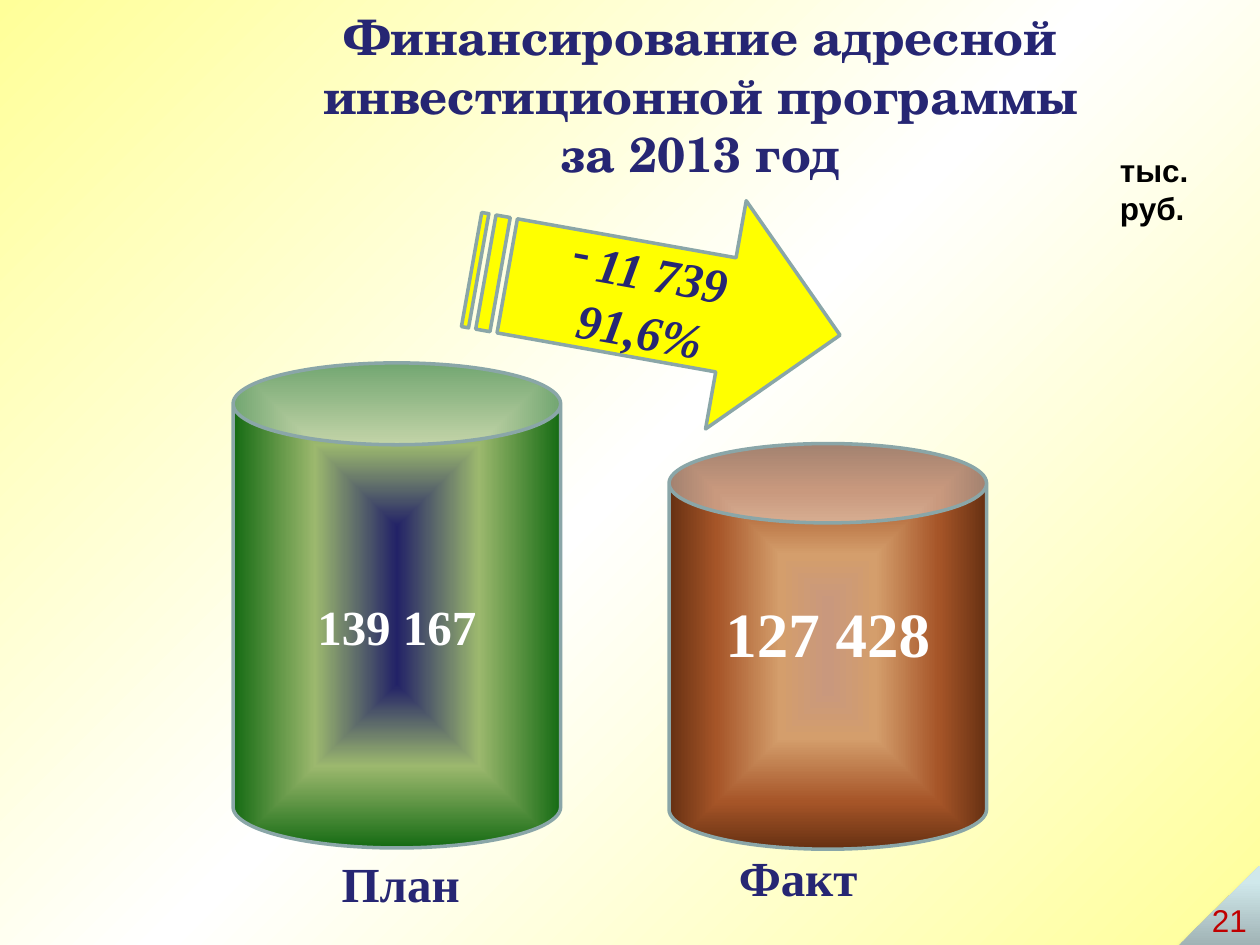
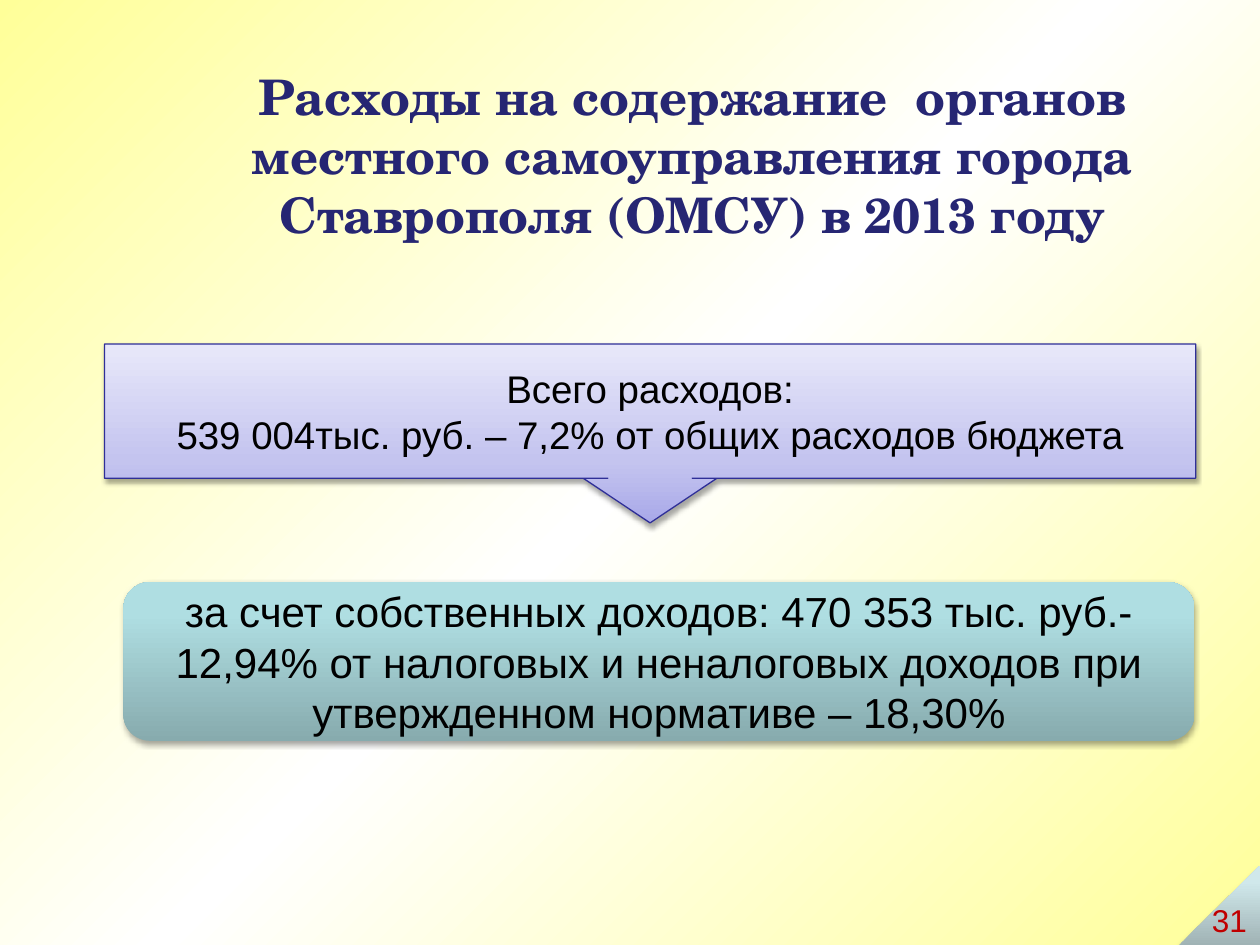
from lxml import etree
from pptx import Presentation
from pptx.dml.color import RGBColor
from pptx.enum.shapes import MSO_SHAPE
from pptx.enum.text import MSO_ANCHOR, MSO_AUTO_SIZE, PP_ALIGN
from pptx.oxml.ns import qn
from pptx.util import Inches, Pt

CENTER, LEFT = PP_ALIGN.CENTER, PP_ALIGN.LEFT
TOP, MIDDLE = MSO_ANCHOR.TOP, MSO_ANCHOR.MIDDLE
NO_AUTOFIT = MSO_AUTO_SIZE.NONE
CAN, ROUNDED = MSO_SHAPE.CAN, MSO_SHAPE.ROUNDED_RECTANGLE
ARROW, CALLOUT = MSO_SHAPE.STRIPED_RIGHT_ARROW, MSO_SHAPE.DOWN_ARROW_CALLOUT
TRIANGLE = MSO_SHAPE.RIGHT_TRIANGLE

COLORS = {
    "title": "262673", "text": "000000", "number": "C00000", "white": "FFFFFF",
    "arrow": "FFFF00", "outline": "8AA6A8", "callout_line": "2F2F98",
}
GRADIENTS = {
    "page": [(0, "FFFF99"), (50, "FFFFFF"), (100, "FFFF99")],
    "corner": [(0, "A0B3B5"), (80, "D0E8EB"), (100, "D1EAEC")],
    "plan": [(0, "222267"), (50, "9CB86E"), (100, "156B13")],
    "fact": [(0, "C9987D"), (30, "D49E6C"), (70, "A65528"), (100, "663012")],
    "callout": [(0, "A9A9E9"), (35, "C4C4EF"), (100, "E8E8FA")],
    "income": [(0, "87ABAE"), (80, "AFDEE2"), (100, "AFE0E4")],
}
SERIF, SANS, TITLE_FONT = "Times New Roman", "Arial", "TeX Gyre Schola"


def gradient(fill, root, name, angle=None):
    fill.gradient()
    grad = root.find(".//" + qn("a:gradFill"))
    for child in list(grad):
        grad.remove(child)
    stops = etree.SubElement(grad, qn("a:gsLst"))
    for pos, color in GRADIENTS[name]:
        gs = etree.SubElement(stops, qn("a:gs"), pos=str(pos * 1000))
        etree.SubElement(gs, qn("a:srgbClr"), val=color)
    if angle is None:
        center = etree.SubElement(grad, qn("a:path"))
        center.set("path", "shape")
        etree.SubElement(center, qn("a:fillToRect"), l="50000", t="50000", r="50000", b="50000")
    else:
        etree.SubElement(grad, qn("a:lin"), ang=str(angle * 60000), scaled="0")


def write(tf, lines, font, size, color, bold=False, italic=False, align=CENTER):
    for i, line in enumerate(lines):
        p = tf.add_paragraph() if i else tf.paragraphs[0]
        p.alignment = align
        r = p.add_run()
        r.text = line
        r.font.name, r.font.size = font, Pt(size)
        r.font.bold, r.font.italic = bold, italic
        r.font.color.rgb = RGBColor.from_string(COLORS[color])


prs = Presentation()
prs.slide_width, prs.slide_height = Inches(10), Inches(7.5)
master = prs.slide_master
gradient(master.background.fill, master._element, "page", 45)

raised = []
slides = []
for number, lines, box, anchor in [
    ("21", ["Финансирование адресной инвестиционной программы", "за 2013 год"],
     (1.13, 0, 8.87, 1.5), TOP),
    ("31", ["Расходы на содержание  органов местного самоуправления города Ставрополя (ОМСУ) в 2013 году"],
     (1.46, 0.53, 8.07, 1.4), MIDDLE),
]:
    s = prs.slides.add_slide(prs.slide_layouts[5])
    slides.append(s)
    title = s.shapes.title
    title.left, title.top, title.width, title.height = map(Inches, box)
    tf = title.text_frame
    tf.auto_size, tf.vertical_anchor, tf.word_wrap = NO_AUTOFIT, anchor, True
    write(tf, lines, TITLE_FONT, 28, "title", bold=True)

    corner = s.shapes.add_shape(TRIANGLE, Inches(9.36), Inches(6.87), Inches(0.64), Inches(0.63))
    corner._element.spPr.find(qn("a:xfrm")).set("flipH", "1")
    gradient(corner.fill, corner._element, "corner", 270)
    corner.line.fill.background()
    raised.append(corner)
    tb = s.shapes.add_textbox(Inches(9.52), Inches(7.1), Inches(0.48), Inches(0.4))
    write(tb.text_frame, [number], SANS, 18, "number", align=LEFT)

finance, upkeep = slides

for name, value, size, box, bottom, label, label_box in [
    ("fact", "127 428", 36, (5.31, 3.52, 2.52, 3.22), 0.59, "Факт", (4.53, 6.66, 3.46, 0.6)),
    ("plan", "139 167", 28, (1.85, 2.88, 2.6, 3.85), 0.05, "План", (1.06, 6.51, 4.09, 0.99)),
]:
    can = finance.shapes.add_shape(CAN, *map(Inches, box))
    can.shadow.inherit = False
    gradient(can.fill, can._element, name)
    can.line.color.rgb = RGBColor.from_string(COLORS["outline"])
    can.line.width = Pt(2)
    can.text_frame.margin_bottom = Inches(bottom)
    write(can.text_frame, [value], SERIF, size, "white", bold=True)

    tb = finance.shapes.add_textbox(*map(Inches, label_box))
    tf = tb.text_frame
    tf.vertical_anchor = MIDDLE
    write(tf, [label], SERIF, 28, "title", bold=True)
    tf.paragraphs[0]._p.get_or_add_pPr().set("marL", str(Inches(0.15)))

tb = finance.shapes.add_textbox(Inches(8.79), Inches(1.15), Inches(1.21), Inches(0.4))
tb.text_frame.word_wrap = True
write(tb.text_frame, ["тыс. руб."], SANS, 18, "text", bold=True, align=LEFT)

arrow = finance.shapes.add_shape(ARROW, Inches(3.72), Inches(1.48), Inches(2.97), Inches(1.84))
arrow.rotation = 10.1
arrow.shadow.inherit = False
arrow.fill.solid()
arrow.fill.fore_color.rgb = RGBColor.from_string(COLORS["arrow"])
arrow.line.color.rgb = RGBColor.from_string(COLORS["outline"])
arrow.line.width = Pt(2)
write(arrow.text_frame, ["11 739", "91,6%"], SERIF, 28, "title", bold=True, italic=True)
pPr = arrow.text_frame.paragraphs[0]._p.get_or_add_pPr()
pPr.set("marL", str(Inches(0.2)))
pPr.set("indent", str(-Inches(0.2)))
etree.SubElement(pPr, qn("a:buFontTx"))
etree.SubElement(pPr, qn("a:buChar"), char="-")

callout = upkeep.shapes.add_shape(CALLOUT, Inches(0.83), Inches(2.73), Inches(8.66), Inches(1.42))
for i, value in enumerate([0.471, 0.374, 0.25, 0.75]):
    callout.adjustments[i] = value
gradient(callout.fill, callout._element, "callout", 270)
callout.line.color.rgb = RGBColor.from_string(COLORS["callout_line"])
callout.line.width = Pt(0.75)
write(callout.text_frame, ["Всего расходов:", "539 004тыс. руб. – 7,2% от общих расходов бюджета"],
      SANS, 22, "text")

income = upkeep.shapes.add_shape(ROUNDED, Inches(0.98), Inches(4.62), Inches(8.5), Inches(1.26))
gradient(income.fill, income._element, "income", 270)
income.line.fill.background()
write(income.text_frame,
      ["за счет собственных доходов: 470 353 тыс. руб.- 12,94% от налоговых и неналоговых доходов "
       "при утвержденном нормативе – 18,30%"], SANS, 24, "text")

for sp in raised + [callout, income]:
    sp.shadow.inherit = False
    effects = sp._element.spPr.find(qn("a:effectLst"))
    shadow = etree.SubElement(effects, qn("a:outerShdw"), blurRad=str(Pt(3.1)), dist=str(Pt(1.8)),
                              dir="5400000", rotWithShape="0")
    color = etree.SubElement(shadow, qn("a:srgbClr"), val=COLORS["text"])
    etree.SubElement(color, qn("a:alpha"), val="35000")

prs.save("out.pptx")
